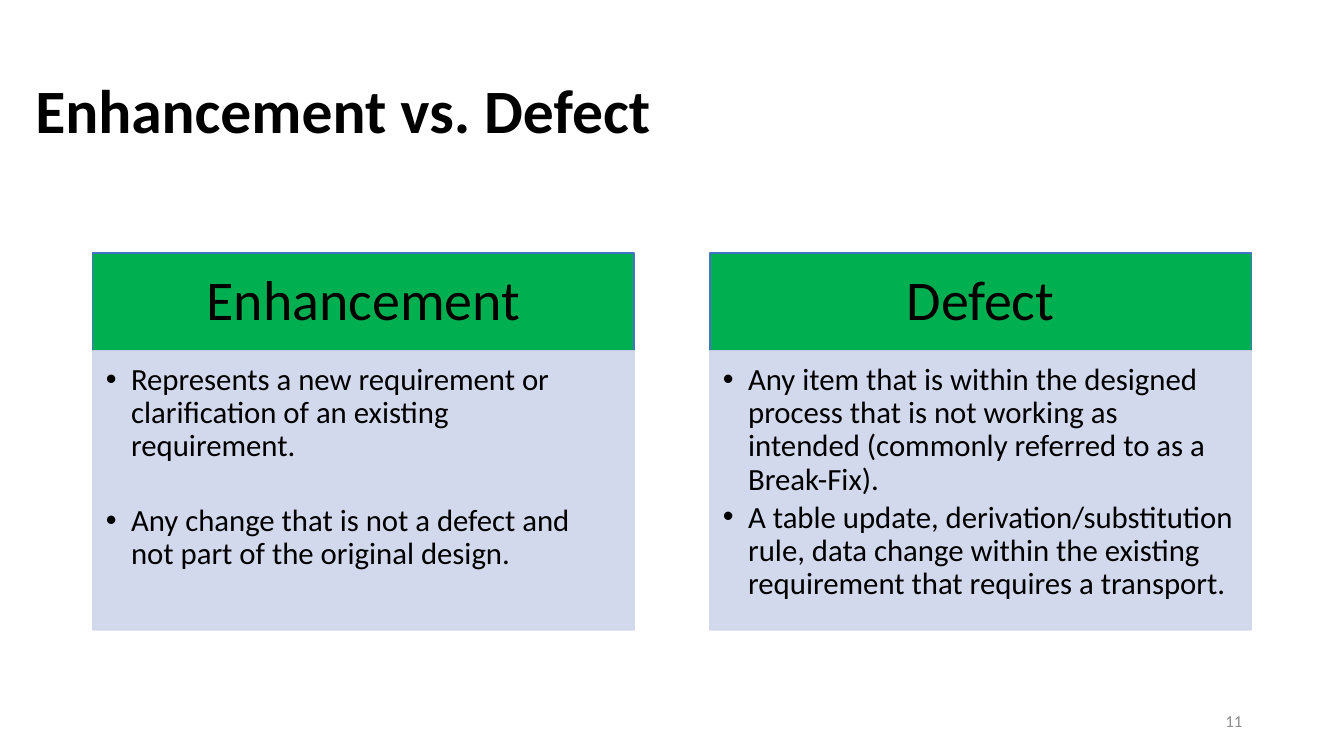
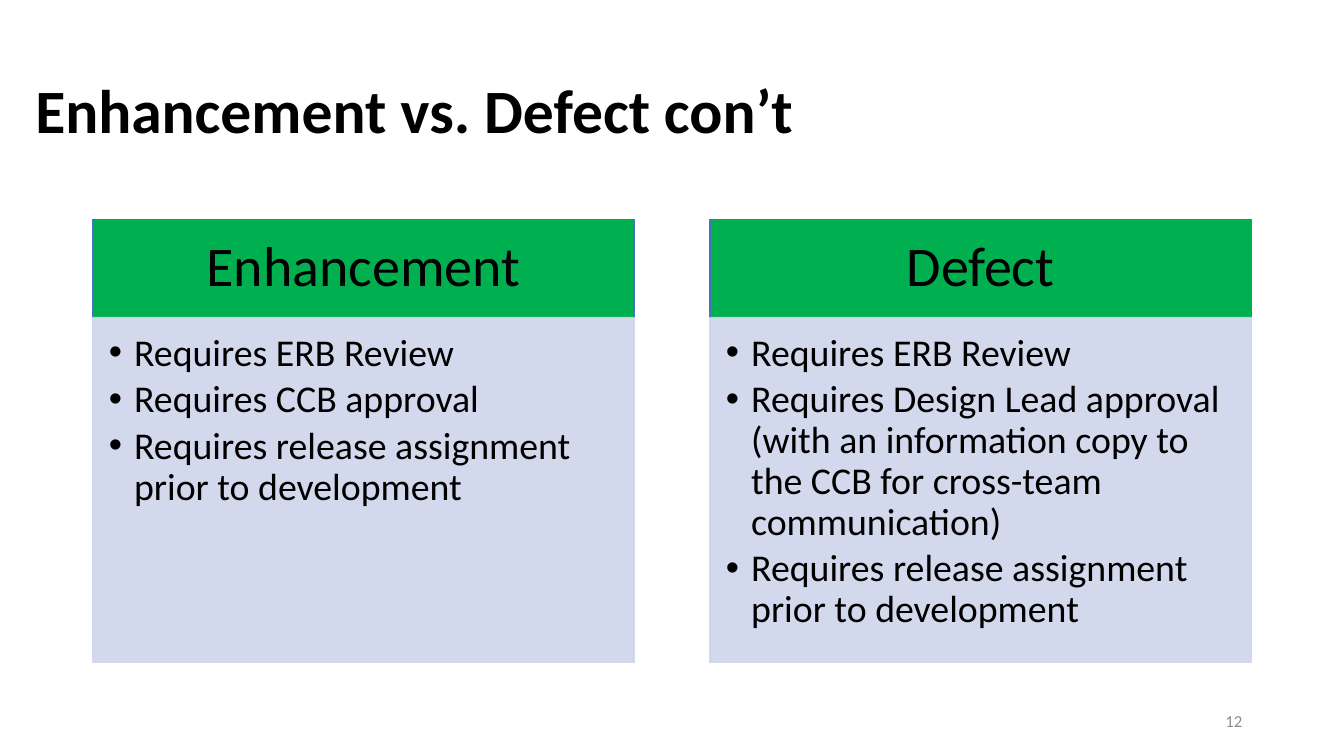
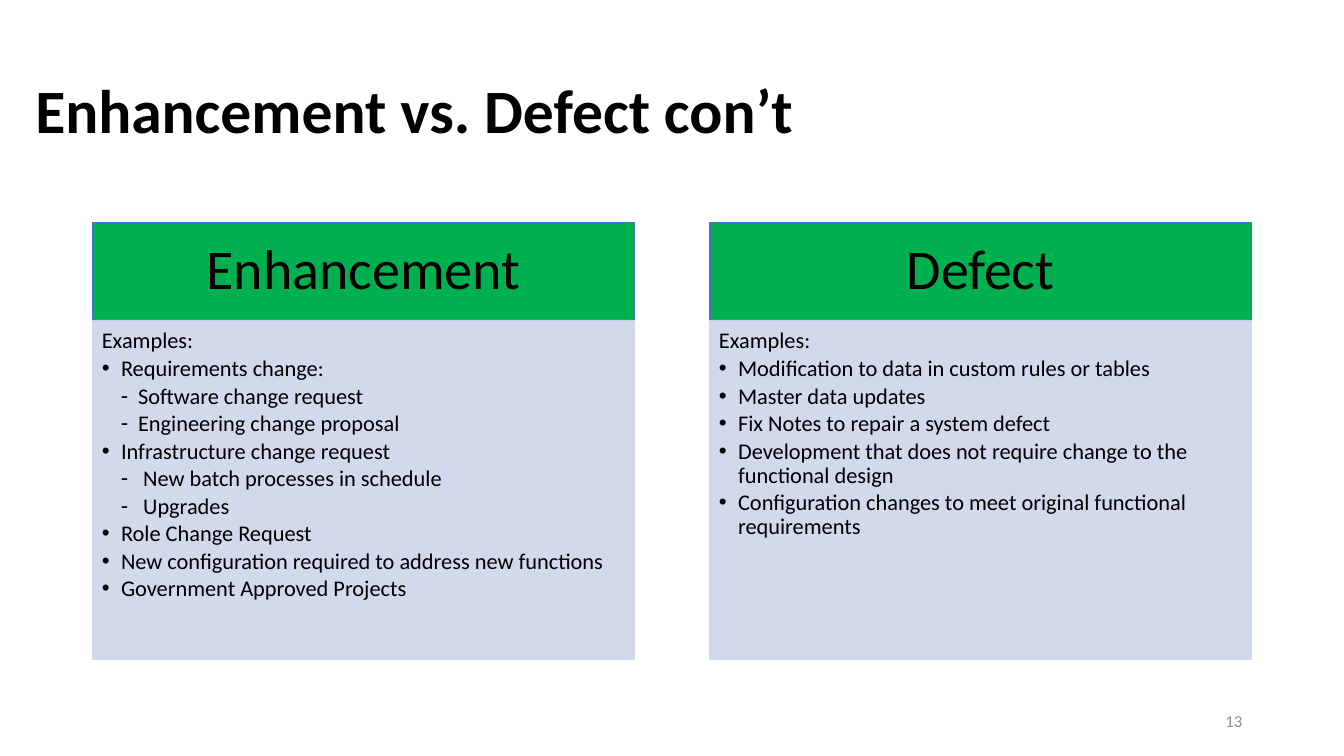
"""Build three slides that compare enhancements with defects."""
from lxml.etree import SubElement
from pptx import Presentation
from pptx.dml.color import RGBColor
from pptx.enum.text import MSO_ANCHOR as Anchor, MSO_AUTO_SIZE as AutoSize, PP_ALIGN as Align
from pptx.oxml.ns import qn
from pptx.util import Emu, Pt

PX = 9144
FONT = "Calibri"
COLORS = {
    "ink": "000000",
    "number": "8C8C8C",
    "header": "00B050",
    "header_line": "4472C4",
    "panel": "CFD5EA",
}
HEADINGS = ["Enhancement", "Defect"]
COLUMN_LEFT, COLUMN_STEP, COLUMN_WIDTH, HEADER_HEIGHT = 92, 612, 537, 97
COMPARISON_LAYOUT = 4

SLIDES = [
    {
        "title": "Enhancement vs. Defect",
        "number": 11, "top": 251, "height": 277, "size": 22, "hang": 25,
        "insets": (13, 13, 17, 19),
        "columns": [
            [
                {"text": "Represents a new requirement or clarification of an existing requirement."},
                {"text": "Any change that is not a defect and not part of the original design.", "before": 26},
            ],
            [
                {"text": "Any item that is within the designed process that is not working as intended "
                         "(commonly referred to as a Break-Fix)."},
                {"text": "A table update, derivation/substitution rule, data change within the existing "
                         "requirement that requires a transport."},
            ],
        ],
    },
    {
        "title": "Enhancement vs. Defect con’t",
        "number": 12, "top": 218, "height": 342, "size": 27, "hang": 25,
        "insets": (16, 16, 21, 24),
        "columns": [
            [
                {"text": "Requires ERB Review"},
                {"text": "Requires CCB approval"},
                {"text": "Requires release assignment prior to development"},
            ],
            [
                {"text": "Requires ERB Review"},
                {"text": "Requires Design Lead approval (with an information copy to the CCB "
                         "for cross-team communication)"},
                {"text": "Requires release assignment prior to development"},
            ],
        ],
    },
    {
        "title": "Enhancement vs. Defect con’t",
        "number": 13, "top": 221, "height": 336, "size": 16, "hang": 19,
        "insets": (9, 9, 12, 14),
        "columns": [
            [
                {"text": "Examples:", "mark": None},
                {"text": "Requirements change:"},
                {"text": "Software change request", "mark": "-", "left": 36, "hang": 17},
                {"text": "Engineering change proposal", "mark": "-", "left": 36, "hang": 17},
                {"text": "Infrastructure change request"},
                {"text": "New batch processes in schedule", "mark": "-", "left": 41, "hang": 22},
                {"text": "Upgrades", "mark": "-", "left": 41, "hang": 22},
                {"text": "Role Change Request"},
                {"text": "New configuration required to address new functions"},
                {"text": "Government Approved Projects"},
            ],
            [
                {"text": "Examples:", "mark": None},
                {"text": "Modification to data in custom rules or tables"},
                {"text": "Master data updates"},
                {"text": "Fix Notes to repair a system defect"},
                {"text": "Development that does not require change to the functional design"},
                {"text": "Configuration changes to meet original functional requirements"},
            ],
        ],
    },
]


def place(box, left, top, width, height, insets=(10, 5, 10, 5), anchor=Anchor.MIDDLE):
    box.left, box.top, box.width, box.height = (
        Emu(length * PX) for length in (left, top, width, height))
    frame = box.text_frame
    frame.auto_size = AutoSize.NONE
    frame.word_wrap = True
    frame.vertical_anchor = anchor
    frame.margin_left, frame.margin_top, frame.margin_right, frame.margin_bottom = (
        Emu(inset * PX) for inset in insets)
    return frame


def write(para, text, size, color="ink", bold=False, align=Align.LEFT, spacing=0.9,
          before=0, after=0, mark=None, left=0, hang=0):
    props = para._p.get_or_add_pPr()
    props.set("marL", str(left * PX))
    props.set("indent", str(-hang * PX))
    if mark:
        SubElement(props, qn("a:buFont"), typeface="Arial")
        SubElement(props, qn("a:buChar"), char=mark)
    else:
        SubElement(props, qn("a:buNone"))
    para.alignment = align
    para.line_spacing = spacing
    para.space_before, para.space_after = Pt(before), Pt(after)
    span = para.add_run()
    span.text = text
    span.font.name, span.font.size, span.font.bold = FONT, Pt(size), bold
    span.font.color.rgb = RGBColor.from_string(COLORS[color])


deck = Presentation()
deck.slide_width, deck.slide_height = Emu(1333 * PX), Emu(750 * PX)

for content in SLIDES:
    page = deck.slides.add_slide(deck.slide_layouts[COMPARISON_LAYOUT])
    title, *boxes = page.placeholders
    frame = place(title, 25, 40, 935, 145)
    write(frame.paragraphs[0], content["title"], 44, bold=True)

    columns = zip(HEADINGS, boxes[::2], boxes[1::2], content["columns"])
    for index, (heading, header, panel, items) in enumerate(columns):
        left = COLUMN_LEFT + index * COLUMN_STEP
        frame = place(header, left, content["top"], COLUMN_WIDTH, HEADER_HEIGHT, (31, 18, 31, 18))
        write(frame.paragraphs[0], heading, 40, align=Align.CENTER)

        frame = place(panel, left, content["top"] + HEADER_HEIGHT, COLUMN_WIDTH,
                      content["height"], content["insets"], Anchor.TOP)
        for position, item in enumerate(items):
            para = frame.add_paragraph() if position else frame.paragraphs[0]
            defaults = {"mark": "•", "left": content["hang"], "hang": content["hang"]}
            write(para, size=content["size"], after=round(content["size"] * 0.15, 1),
                  **{**defaults, **item})

        for box, fill, line in ((header, "header", "header_line"), (panel, "panel", "panel")):
            box.fill.solid()
            box.fill.fore_color.rgb = RGBColor.from_string(COLORS[fill])
            box.line.color.rgb = RGBColor.from_string(COLORS[line])
            box.line.width = Pt(1)
        for color in panel.element.spPr.iter(qn("a:srgbClr")):
            SubElement(color, qn("a:alpha"), val="90000")

    number = page.shapes.add_textbox(0, 0, 0, 0)
    frame = place(number, 942, 695, 300, 40)
    write(frame.paragraphs[0], str(content["number"]), 12, color="number",
          align=Align.RIGHT, spacing=1.0)

deck.save("out.pptx")
